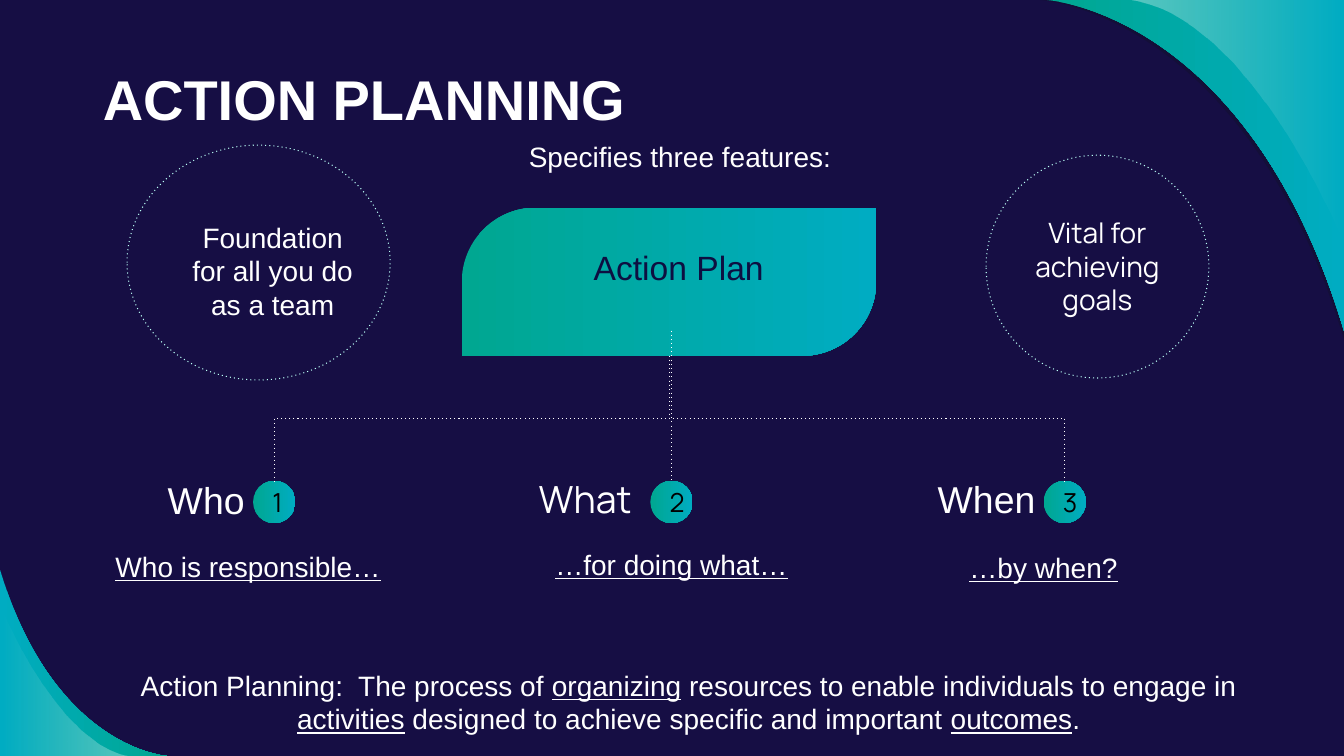
from lxml.etree import SubElement
from pptx import Presentation
from pptx.dml.color import RGBColor
from pptx.enum.shapes import MSO_CONNECTOR, MSO_SHAPE
from pptx.enum.text import MSO_ANCHOR, PP_ALIGN
from pptx.oxml.ns import qn
from pptx.util import Inches, Pt

WHITE, NAVY, MINT = "FFFFFF", "160E44", "BAFFF6"
CYAN, TEAL = "00ACC2", "00A791"
WIDTH, HEIGHT = 13.33, 7.5
CENTER = 6.64
BRANCH_TOP, BADGE_TOP, BADGE_SIZE = 3.53, 4.77, 0.42


def color(value):
    return RGBColor.from_string(value)


def set_alpha(element, percent):
    SubElement(element, qn("a:alpha"), val=str(percent * 1000))


def fill_gradient(shape, left, right, alphas=None):
    shape.fill.gradient()
    shape.fill.gradient_angle = 0
    stops = shape.fill.gradient_stops
    for stop, value, position in zip(stops, (left, right), (0, 1)):
        stop.color.rgb = color(value)
        stop.position = position
    if alphas:
        elements = shape.element.spPr.iter(qn("a:srgbClr"))
        for element, percent in zip(list(elements), alphas):
            set_alpha(element, percent)


def dot_line(shape, value):
    shape.line.color.rgb = color(value)
    shape.line.width = Pt(0.75)
    SubElement(shape.element.spPr.find(qn("a:ln")), qn("a:prstDash"), val="dot")


def add_corner(page, curve, corner):
    start, first, second, end = [tuple(map(Inches, point)) for point in curve]
    builder = page.shapes.build_freeform(*start, scale=1.0)
    builder.add_line_segments([end, tuple(map(Inches, corner))], close=True)
    shape = builder.convert_to_shape()
    shape.shadow.inherit = False
    shape.line.fill.background()
    segment = next(shape.element.spPr.iter(qn("a:lnTo")))
    segment.tag = qn("a:cubicBezTo")
    segment.remove(segment[0])
    for x, y in (first, second, end):
        SubElement(segment, qn("a:pt"), x=str(x - shape.left), y=str(y - shape.top))
    return shape


def add_preset(page, kind, left, top, width, height):
    shape = page.shapes.add_shape(kind, *map(Inches, (left, top, width, height)))
    shape.shadow.inherit = False
    shape.fill.background()
    shape.line.fill.background()
    return shape


def write(shape, runs, size, font="Arial", value=WHITE, align=PP_ALIGN.CENTER,
          anchor=MSO_ANCHOR.TOP, insets=(0.13, 0.13), bold=False, before=None, after=None):
    frame = shape.text_frame
    frame.word_wrap = True
    frame.vertical_anchor = anchor
    frame.margin_left = frame.margin_right = Inches(insets[0])
    frame.margin_top = frame.margin_bottom = Inches(insets[1])
    para = frame.paragraphs[0]
    para.alignment = align
    para.line_spacing = Pt(size * 1.2)
    if before:
        para.space_before = Pt(before)
    if after:
        para.space_after = Pt(after)
    para.font.size = Pt(size)
    para.font.name = font
    para.font.bold = bold
    para.font.color.rgb = color(value)
    for text, underlined in runs:
        span = para.add_run()
        span.text = text
        if underlined:
            span.font.underline = True


def add_text(page, area, text, size, underlined=False, **style):
    box = page.shapes.add_textbox(*map(Inches, area))
    runs = [(text, underlined)] if isinstance(text, str) else text
    write(box, runs, size, **style)


def add_dotted_connector(page, kind, start, end):
    connector = page.shapes.add_connector(kind, *map(Inches, start + end))
    dot_line(connector, WHITE)
    SubElement(connector.element.spPr, qn("a:effectLst"))
    return connector


def add_branch(page, end_x):
    middle_x, middle_y = (CENTER + end_x) / 2, (BRANCH_TOP + BADGE_TOP) / 2
    half_width, half_height = (BADGE_TOP - BRANCH_TOP) / 2, abs(end_x - CENTER) / 2
    side = -1 if end_x < CENTER else 1
    connector = add_dotted_connector(
        page, MSO_CONNECTOR.ELBOW,
        (middle_x + side * half_width, middle_y - half_height),
        (middle_x - side * half_width, middle_y + half_height))
    angle = 90 if side < 0 else 270
    connector.element.spPr.find(qn("a:xfrm")).set("rot", str(angle * 60000))


def add_corners(page):
    top_right, bottom_left = (WIDTH, 0), (0, HEIGHT)
    shade = add_corner(page, ((WIDTH, 3.37), (12.35, 0.11), (10.31, 0), (10.31, 0)), top_right)
    shade.fill.solid()
    shade.fill.fore_color.rgb = color("12102F")
    set_alpha(next(shade.element.spPr.iter(qn("a:srgbClr"))), 54)
    waves = [
        (((10.38, 0), (10.38, 0), (12.38, 0.11), (WIDTH, 3.28)), top_right, TEAL, CYAN, None),
        (((WIDTH, 2.44), (WIDTH, 2.44), (12.42, 0.15), (11.18, 0)), top_right, WHITE, WHITE, (36, 0)),
        (((1.66, HEIGHT), (1.66, HEIGHT), (0.54, 7.44), (0, 5.65)), bottom_left, CYAN, TEAL, None),
        (((0, 6.01), (0, 6.01), (0.56, 7.41), (1.32, HEIGHT)), bottom_left, WHITE, WHITE, (0, 36)),
    ]
    for curve, corner, left, right, alphas in waves:
        fill_gradient(add_corner(page, curve, corner), left, right, alphas)


def add_badge(page, number, left):
    badge = add_preset(page, MSO_SHAPE.OVAL, left, BADGE_TOP, BADGE_SIZE, BADGE_SIZE)
    fill_gradient(badge, TEAL, CYAN)
    write(badge, [(str(number), False)], 18.7, font="Manrope", value="000000",
          anchor=MSO_ANCHOR.MIDDLE)


def add_circle_note(page, circle_area, text_area, text, font):
    circle = add_preset(page, MSO_SHAPE.OVAL, *circle_area)
    dot_line(circle, MINT)
    add_text(page, text_area, text, 20, font=font, anchor=MSO_ANCHOR.MIDDLE)


def main():
    deck = Presentation()
    deck.slide_width, deck.slide_height = Inches(WIDTH), Inches(HEIGHT)
    page = deck.slides.add_slide(deck.slide_layouts[6])
    page.background.fill.solid()
    page.background.fill.fore_color.rgb = color(NAVY)
    add_corners(page)

    add_text(page, (0.89, 0.51, 10.26, 0.92), "ACTION PLANNING", 40,
             align=PP_ALIGN.LEFT, bold=True)
    add_text(page, (4.69, 1.25, 4.11, 0.81), "Specifies three features:", 20, before=8)

    plan = add_preset(page, MSO_SHAPE.ROUND_2_DIAG_RECTANGLE, 4.58, 2.06, 4.11, 1.47)
    plan.adjustments[0], plan.adjustments[1] = 0.5, 0
    fill_gradient(plan, TEAL, CYAN)

    steps = [
        ("Who", "Arial", (1.17, 4.66, 1.75, 0.65),
         "Who is responsible…", (0.82, 5.32, 3.28, 1), 2.51),
        ("What", "Manrope", (4.68, 4.65, 2.25, 0.65),
         "…for doing what…", (5.11, 5.3, 3.1, 0.97), 6.45),
        ("When", "Arial", (8.91, 4.65, 1.75, 0.65),
         "…by when?", (8.8, 5.33, 3.1, 0.63), 10.35),
    ]
    for number, (name, font, name_area, detail, detail_area, left) in enumerate(steps, 1):
        add_text(page, name_area, name, 26.7, font=font, anchor=MSO_ANCHOR.BOTTOM)
        add_text(page, detail_area, detail, 20, underlined=True, after=21.3)
        add_badge(page, number, left)

    for end_x in (2.72, 10.56):
        add_branch(page, end_x)
    add_dotted_connector(page, MSO_CONNECTOR.STRAIGHT, (6.66, 3.28), (6.66, BADGE_TOP))

    add_circle_note(page, (1.26, 1.44, 2.61, 2.33), (1.75, 2.19, 1.91, 0.99),
                    "Foundation for all you do as a team", "Arial")
    add_circle_note(page, (9.78, 1.54, 2.21, 2.21), (9.78, 2.19, 2.21, 0.9),
                    "Vital for achieving goals", "Manrope")

    definition = [
        ("Action Planning:  The process of ", False), ("organizing", True),
        (" resources to enable individuals to engage in ", False), ("activities", True),
        (" designed to achieve specific and important ", False), ("outcomes", True),
        (".", False),
    ]
    add_text(page, (0.74, 6.58, 12.18, 0.77), definition, 20, insets=(0.1, 0.05), before=8)
    add_text(page, (5.79, 2.4, 2.05, 0.5), "Action Plan", 24, value="0D0F41",
             align=PP_ALIGN.LEFT, insets=(0.1, 0.05))
    deck.save("out.pptx")


if __name__ == "__main__":
    main()
